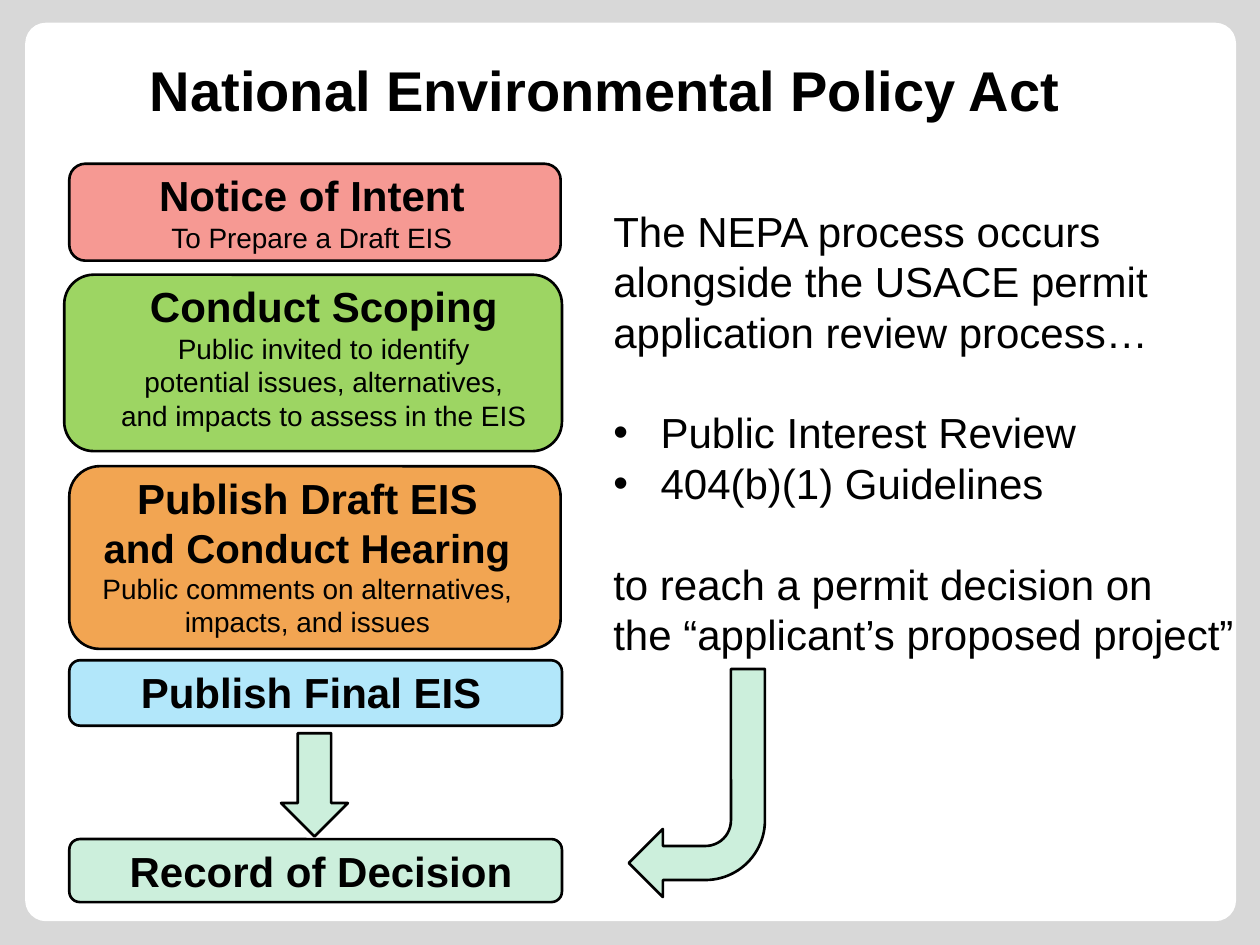
"""Build the National Environmental Policy Act process slide."""
from lxml import etree
from pptx import Presentation
from pptx import util as u
from pptx.dml.color import RGBColor
from pptx.enum import shapes, text
from pptx.oxml.ns import qn

BLACK = RGBColor(0x00, 0x00, 0x00)
WHITE = RGBColor(0xFF, 0xFF, 0xFF)
GRAY = RGBColor(0xD8, 0xD8, 0xD8)
RED = RGBColor(0xF5, 0x8D, 0x86)
LIME = RGBColor(0x92, 0xD0, 0x50)
ORANGE = RGBColor(0xF1, 0x9B, 0x3D)
BLUE = RGBColor(0x00, 0xB0, 0xF0)
GREEN = RGBColor(0x00, 0xB0, 0x50)

ROUNDED = shapes.MSO_SHAPE.ROUNDED_RECTANGLE
CENTER = text.PP_ALIGN.CENTER
LEFT = text.PP_ALIGN.LEFT
HEAD = {"size": u.Pt(24), "bold": True}
SUBHEAD = {"size": u.Pt(23), "bold": True}
DETAIL = {"size": u.Pt(16), "bold": False}
BODY = {"size": u.Pt(24), "bold": False}

STEPS = [
    (RED, 89, (39.6, 93.6, 280.8, 55.4), (54.7, 247), CENTER,
     [("Notice of Intent", HEAD), ("To Prepare a Draft EIS", DETAIL)]),
    (LIME, 89, (36.7, 157, 284.4, 100.8), (60.5, 249.1), CENTER,
     [("Conduct Scoping", HEAD), ("Public invited to identify", DETAIL),
      ("potential issues, alternatives,", DETAIL),
      ("and impacts to assess in the EIS", DETAIL)]),
    (ORANGE, 89, (39.6, 266.4, 280.8, 104.4), (46.1, 259.2), CENTER,
     [("Publish Draft EIS", HEAD), ("and Conduct Hearing", SUBHEAD),
      ("Public comments on alternatives,", DETAIL), ("impacts, and issues", DETAIL)]),
    (BLUE, 30, (39.6, 377.3, 281.5, 37.4), (73.4, 211), LEFT,
     [("Publish Final EIS", HEAD)]),
    (GREEN, 20, (39.6, 479.5, 281.5, 36), (67, 235.4), LEFT,
     [("Record of Decision", HEAD)]),
]

NOTES = [
    ("The NEPA process occurs", 0, False),
    ("alongside the USACE permit", 0, False),
    ("application review process…", 0, False),
    ("Public Interest Review", 28.8, True),
    ("404(b)(1) Guidelines", 0, True),
    ("to reach a permit decision on", 28.8, False),
    ("the “applicant’s proposed project”", 0, False),
]


class Painter:
    """Hold the slide style and draw each kind of element."""

    font_name = "Arial"
    line_width = u.Pt(1.5)

    def __init__(self, page):
        self.page = page

    def add_span(self, para, words, look):
        span = para.add_run()
        span.text = words
        for name, value in {"name": self.font_name, **look}.items():
            setattr(span.font, name, value)
        span.font.color.rgb = BLACK

    def prepare(self, frame):
        values = {"word_wrap": False, "auto_size": text.MSO_AUTO_SIZE.NONE,
                  "vertical_anchor": text.MSO_ANCHOR.TOP,
                  "margin_left": u.Pt(7.2), "margin_right": u.Pt(7.2),
                  "margin_top": u.Pt(3.6), "margin_bottom": u.Pt(3.6)}
        for name, value in values.items():
            setattr(frame, name, value)

    def title(self, words, place):
        box = self.page.shapes.title
        for name, value in zip(("left", "top", "width", "height"), place):
            setattr(box, name, u.Pt(value))
        self.prepare(box.text_frame)
        para = box.text_frame.paragraphs[0]
        para.alignment = LEFT
        self.add_span(para, words, {"size": u.Pt(32), "bold": True})

    def shape(self, kind, place, color, opacity=100, outlined=True):
        shape = self.page.shapes.add_shape(kind, *map(u.Pt, place))
        shape.shadow.inherit = False
        shape.fill.solid()
        shape.fill.fore_color.rgb = color
        if opacity < 100:
            tint = shape._element.spPr.find(qn("a:solidFill")).find(qn("a:srgbClr"))
            etree.SubElement(tint, qn("a:alpha"), val=str(opacity * 1000))
        if outlined:
            shape.line.color.rgb = BLACK
            shape.line.width = self.line_width
        else:
            shape.line.fill.background()
        return shape

    def panel(self, place):
        panel = self.shape(ROUNDED, place, WHITE, outlined=False)
        panel.adjustments[0] = 0.023
        self.page.shapes.title._element.addprevious(panel._element)

    def text_box(self, place):
        frame = self.page.shapes.add_textbox(*map(u.Pt, place)).text_frame
        self.prepare(frame)
        return frame

    def paragraph(self, frame, index):
        return frame.add_paragraph() if index else frame.paragraphs[0]

    def step(self, color, opacity, place, extent, align, lines):
        self.shape(ROUNDED, place, color, opacity)
        left, width = extent
        frame = self.text_box((left, place[1], width, place[3]))
        for index, (words, look) in enumerate(lines):
            para = self.paragraph(frame, index)
            para.alignment = align
            self.add_span(para, words, look)

    def notes(self, place, lines):
        frame = self.text_box(place)
        for index, (words, gap, bulleted) in enumerate(lines):
            para = self.paragraph(frame, index)
            if gap:
                para.space_before = u.Pt(gap)
            if bulleted:
                self.bullet(para)
            self.add_span(para, words, BODY)

    def bullet(self, para):
        props = para._p.get_or_add_pPr()
        props.set("marL", str(u.Pt(27)))
        props.set("indent", str(-u.Pt(27)))
        etree.SubElement(props, qn("a:buFont"), typeface=self.font_name)
        etree.SubElement(props, qn("a:buChar"), char="•")


def main():
    deck = Presentation()
    deck.slide_width, deck.slide_height = u.Pt(720), u.Pt(540)
    page = deck.slides.add_slide(deck.slide_layouts[5])
    page.background.fill.solid()
    page.background.fill.fore_color.rgb = GRAY
    painter = Painter(page)
    painter.panel((14.4, 13, 691.9, 513.4))
    painter.title("National Environmental Policy Act", (78.5, 28.1, 538.6, 46.1))
    for step in STEPS:
        painter.step(*step)
    painter.shape(shapes.MSO_SHAPE.DOWN_ARROW, (160.6, 419, 38.2, 59), GREEN, 20)
    painter.notes((343.4, 113.8, 373.7, 269.3), NOTES)
    bend = painter.shape(shapes.MSO_SHAPE.BENT_ARROW, (359.3, 382.3, 77.8, 130.3), GREEN, 20)
    bend.rotation = 180
    deck.save("out.pptx")


if __name__ == "__main__":
    main()
